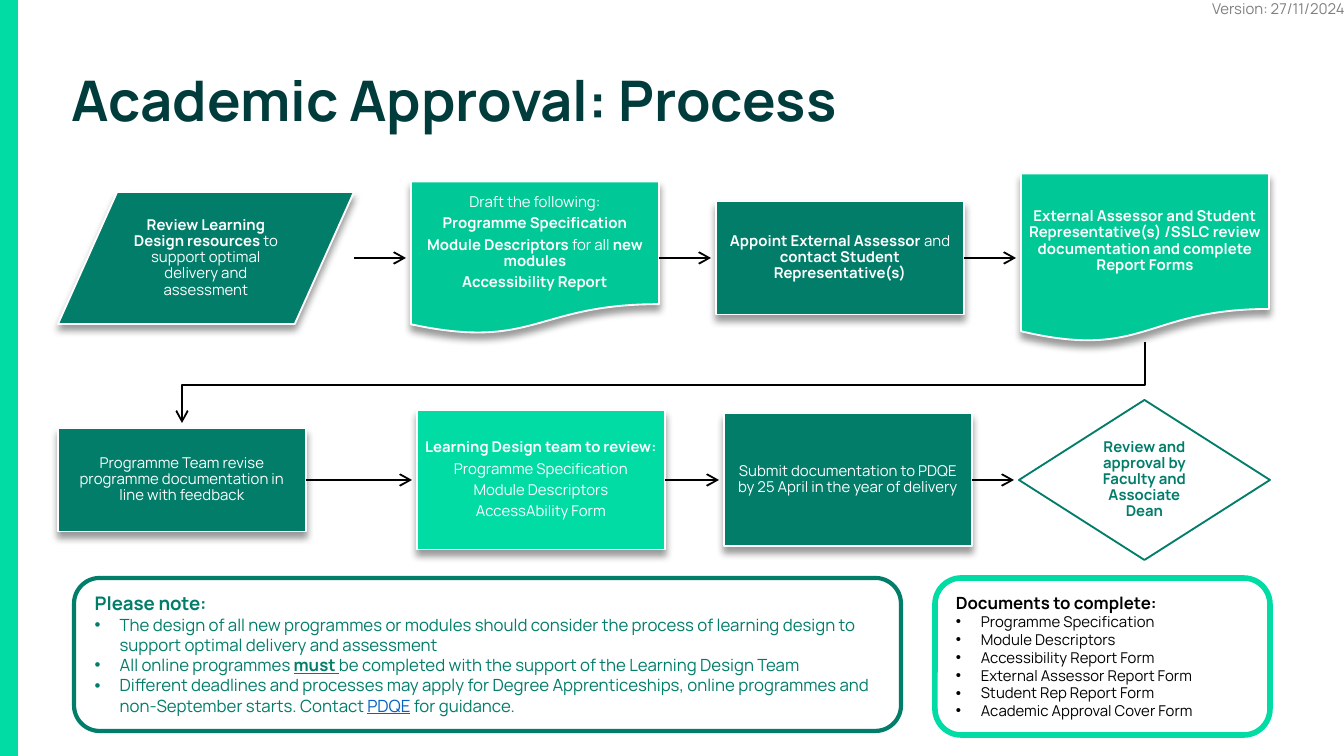
from dataclasses import dataclass
from itertools import pairwise
from typing import NamedTuple, Optional

import pptx
import pptx.dml.color
import pptx.enum.shapes
import pptx.enum.text
import pptx.oxml
import pptx.oxml.ns
import pptx.util
from lxml import etree

SHAPE = pptx.enum.shapes.MSO_SHAPE
ALIGN = pptx.enum.text.PP_ALIGN
ANCHOR = pptx.enum.text.MSO_ANCHOR
Pt = pptx.util.Pt
qn = pptx.oxml.ns.qn
EMU_PER_PX = 914400 / 134.4


@dataclass(frozen=True)
class Theme:
    font: str = "Manrope"
    ink: str = "003C3B"
    dark: str = "017D69"
    mid: str = "00C896"
    light: str = "01DCA5"
    white: str = "FFFFFF"
    black: str = "000000"
    grey: str = "808080"
    link: str = "0563C1"
    title: int = 30
    heading: int = 10
    body: int = 9
    small: int = 8


T = Theme()


class Run(NamedTuple):
    text: str
    bold: bool = False
    underline: bool = False
    color: Optional[str] = None


@dataclass(frozen=True)
class Step:
    """A process box, centred vertically on its row."""
    kind: SHAPE
    left: int
    width: int
    height: int
    fill: Optional[str]
    paragraphs: list[list[Run]]


@dataclass(frozen=True)
class Panel:
    left: int
    top: int
    width: int
    height: int
    fill: Optional[str]
    line: str
    line_pt: float
    color: str
    heading: str
    heading_pt: int
    item_pt: int
    items: list[list[Run]]


def px(n: float) -> pptx.util.Emu:
    return pptx.util.Emu(round(n * EMU_PER_PX))


def rgb(value: str) -> pptx.dml.color.RGBColor:
    return pptx.dml.color.RGBColor.from_string(value)


def write_runs(p, runs: list[Run], size: int, color: str) -> None:
    for run in runs:
        r = p.add_run()
        r.text = run.text
        r.font.name, r.font.size = T.font, Pt(size)
        r.font.bold = run.bold
        r.font.underline = run.underline
        r.font.color.rgb = rgb(run.color or color)


def paint(sp, fill: Optional[str], line: Optional[str], width: float = 1) -> None:
    sp.shadow.inherit = False
    if fill:
        sp.fill.solid()
        sp.fill.fore_color.rgb = rgb(fill)
    else:
        sp.fill.background()
    if line:
        sp.line.color.rgb = rgb(line)
        sp.line.width = Pt(width)
    else:
        sp.line.fill.background()


def add_drop_shadow(sp) -> None:
    effects = sp._element.spPr.find(qn("a:effectLst"))
    shadow = etree.SubElement(effects, qn("a:outerShdw"), blurRad=str(Pt(4)),
                              dist=str(Pt(3)), dir="5400000", rotWithShape="0")
    color = etree.SubElement(shadow, qn("a:srgbClr"), val=T.black)
    etree.SubElement(color, qn("a:alpha"), val="40000")


def style_arrow(sp) -> None:
    sp.line.color.rgb = rgb(T.black)
    sp.line.width = Pt(1)
    etree.SubElement(sp.line._get_or_add_ln(), qn("a:tailEnd"), type="arrow")


def add_label(s, box: tuple[int, int, int, int], run: Run, size: int, color: str,
              anchor: ANCHOR = ANCHOR.TOP, spacing: float = 1.0) -> None:
    tf = s.shapes.add_textbox(*map(px, box)).text_frame
    tf.word_wrap = True
    tf.vertical_anchor = anchor
    p = tf.paragraphs[0]
    p.line_spacing = spacing
    write_runs(p, [run], size, color)


def add_step(s, step: Step, center_y: int):
    sp = s.shapes.add_shape(step.kind, px(step.left), px(center_y - step.height / 2),
                            px(step.width), px(step.height))
    paint(sp, step.fill, T.white if step.fill else T.dark)
    if step.fill:
        add_drop_shadow(sp)
    tf = sp.text_frame
    tf.word_wrap = True
    tf.vertical_anchor = ANCHOR.MIDDLE
    tf.margin_left = tf.margin_right = tf.margin_top = tf.margin_bottom = px(8)
    for i, runs in enumerate(step.paragraphs):
        p = tf.add_paragraph() if i else tf.paragraphs[0]
        p.alignment = ALIGN.CENTER
        p.line_spacing = 0.9
        p.space_after = Pt(2.8)
        write_runs(p, runs, T.small, T.white if step.fill else T.dark)
    return sp


def add_row(s, steps: list[Step], center_y: int) -> None:
    """Draw the steps, with an arrow stopping just short of each next one."""
    shapes = [add_step(s, step, center_y) for step in steps]
    for (a, sp), (b, _) in pairwise(zip(steps, shapes)):
        arrow = s.shapes.add_connector(
            pptx.enum.shapes.MSO_CONNECTOR.STRAIGHT, px(a.left + a.width),
            px(center_y), px(b.left - 5), px(center_y))
        if a.kind != SHAPE.FLOWCHART_DATA:
            arrow.begin_connect(sp, 3)
        style_arrow(arrow)
        etree.SubElement(arrow._element.spPr, qn("a:effectLst"))


def add_row_link(s, points: list[tuple[int, int]]) -> None:
    builder = s.shapes.build_freeform(*points[0], scale=EMU_PER_PX)
    builder.add_line_segments(points[1:], close=False)
    sp = builder.convert_to_shape()
    paint(sp, None, T.black)
    style_arrow(sp)


def add_panel(s, panel: Panel) -> None:
    sp = s.shapes.add_shape(SHAPE.ROUNDED_RECTANGLE, px(panel.left), px(panel.top),
                            px(panel.width), px(panel.height))
    paint(sp, panel.fill, panel.line, panel.line_pt)
    tf = sp.text_frame
    tf.word_wrap = True
    tf.vertical_anchor = ANCHOR.TOP
    p = tf.paragraphs[0]
    p.alignment = ALIGN.LEFT
    write_runs(p, [Run(panel.heading, True)], panel.heading_pt, panel.color)
    for runs in panel.items:
        p = tf.add_paragraph()
        p.alignment = ALIGN.LEFT
        pPr = p._p.get_or_add_pPr()
        pPr.set("marL", str(px(25)))
        pPr.set("indent", str(-px(25)))
        etree.SubElement(pPr, qn("a:buFont"), typeface="Arial")
        etree.SubElement(pPr, qn("a:buChar"), char="•")
        write_runs(p, runs, panel.item_pt, panel.color)


FIRST_ROW = [
    Step(SHAPE.FLOWCHART_DATA, 58, 296, 132, T.dark, [
        [Run("Review Learning Design resources ", True),
         Run("to support optimal delivery and assessment")]]),
    Step(SHAPE.FLOWCHART_DOCUMENT, 411, 248, 153, T.mid, [
        [Run("Draft the following:")], [Run("Programme Specification", True)],
        [Run("Module Descriptors ", True), Run("for all "), Run("new modules", True)],
        [Run("Accessibility Report", True)]]),
    Step(SHAPE.FLOWCHART_PROCESS, 716, 248, 113, T.dark, [
        [Run("Appoint External Assessor ", True), Run("and "),
         Run("contact Student Representative(s)", True)]]),
    Step(SHAPE.FLOWCHART_DOCUMENT, 1021, 248, 169, T.mid, [
        [Run("External Assessor and Student Representative(s) /SSLC review "
             "documentation and complete Report Forms", True)]]),
]
SECOND_ROW = [
    Step(SHAPE.RECTANGLE, 58, 248, 103, T.dark, [
        [Run("Programme Team revise programme documentation in line with feedback")]]),
    Step(SHAPE.RECTANGLE, 417, 248, 139, T.light, [
        [Run("Learning Design team to review:", True)], [Run("Programme Specification")],
        [Run("Module Descriptors")], [Run("AccessAbility Form")]]),
    Step(SHAPE.RECTANGLE, 724, 248, 133, T.dark, [
        [Run("Submit documentation to PDQE by 25 April in the year of delivery")]]),
    Step(SHAPE.FLOWCHART_DECISION, 1019, 251, 160, None, [
        [Run("Review and approval by Faculty and Associate Dean", True)]]),
]
NOTES = Panel(74, 578, 827, 153, None, T.dark, 2.25, T.dark, "Please note:", T.heading, T.body, [
    [Run("The design of all new programmes or modules should consider the process "
         "of learning design to support optimal delivery and assessment")],
    [Run("All online programmes "), Run("must ", True, True),
     Run("be completed with the support of the Learning Design Team")],
    [Run("Different deadlines and processes may apply for Degree Apprenticeships, "
         "online programmes and non-September starts. Contact "),
     Run("PDQE", underline=True, color=T.link), Run(" for guidance.")]])
DOCUMENTS = Panel(
    935, 578, 335, 157, T.white, T.light, 3, T.black, "Documents to complete:", T.body, T.small,
    [[Run(name)] for name in (
        "Programme Specification", "Module Descriptors", "Accessibility Report Form",
        "External Assessor Report Form", "Student Rep Report Form",
        "Academic Approval Cover Form")])


def main() -> None:
    prs = pptx.Presentation()
    prs.slide_width, prs.slide_height = px(1344), px(756)
    s = prs.slides.add_slide(prs.slide_layouts[6])
    side_bar = s.shapes.add_shape(SHAPE.RECTANGLE, 0, 0, px(18), px(756))
    paint(side_bar, T.light, None)
    add_label(s, (58, 69, 915, 69), Run("Academic Approval: Process", True),
              T.title, T.ink, ANCHOR.MIDDLE, 0.9)
    add_row(s, FIRST_ROW, 258)
    add_row_link(s, [(1145, 342), (1145, 385), (182, 385), (182, 423)])
    add_row(s, SECOND_ROW, 480)
    add_panel(s, NOTES)
    add_panel(s, DOCUMENTS)
    add_label(s, (1199, -7, 180, 32), Run("Version: 27/11/2024"), T.small, T.grey)
    prs.save("out.pptx")


if __name__ == "__main__":
    main()
